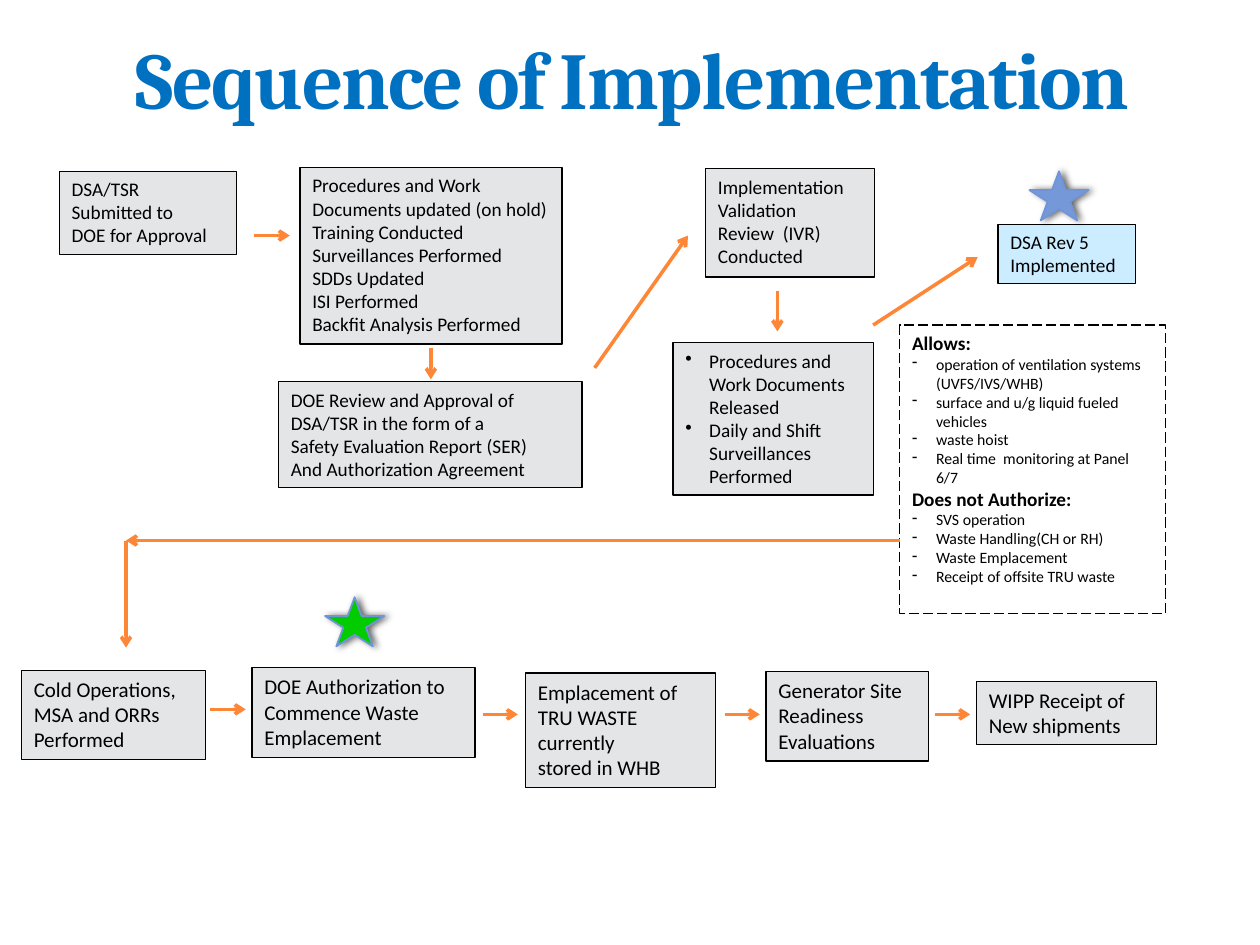
from typing import NamedTuple

from pptx import Presentation
from pptx.dml.color import RGBColor
from pptx.enum.dml import MSO_LINE
from pptx.enum.shapes import MSO_CONNECTOR, MSO_SHAPE
from pptx.enum.text import MSO_ANCHOR, MSO_AUTO_SIZE, PP_ALIGN
from pptx.oxml import parse_xml
from pptx.oxml.ns import nsdecls, qn
from pptx.oxml.xmlchemy import OxmlElement
from pptx.util import Inches, Pt

COLORS = {
    "title": "0070C0", "text": "000000", "border": "000000",
    "step": "E4E5E6", "milestone": "CCECFF", "arrow": "FE8637",
    "blue star": "7598D9", "green star": "00CC00", "star edge": "7094D7",
}


class Item(NamedTuple):
    text: str
    bullet: str = ""
    size: float = 11
    bold: bool = False


class Box(NamedTuple):
    left: float
    top: float
    width: float
    height: float
    items: list[Item]
    fill: str | None = "step"
    wrap: bool = False


class Arrow(NamedTuple):
    x1: float
    y1: float
    x2: float
    y2: float


class Star(NamedTuple):
    left: float
    top: float
    fill: str


def lines(*texts: str, size: float = 11) -> list[Item]:
    return [Item(text, size=size) for text in texts]


def dashes(*texts: str) -> list[Item]:
    return [Item(text, "-", 9) for text in texts]


def heading(text: str) -> list[Item]:
    return [Item(text, bold=True)]


# A vertical tab is a line break inside a paragraph.
BOXES = [
    Box(0.47, 1.36, 1.41, 0.66, lines("DSA/TSR", "Submitted to", "DOE for Approval")),
    Box(2.38, 1.33, 2.08, 1.4, lines(
        "Procedures and Work", "Documents updated (on hold)", "Training Conducted",
        "Surveillances Performed", "SDDs Updated", "ISI Performed",
        "Backfit Analysis Performed")),
    Box(2.21, 3.03, 2.41, 0.84, lines(
        "DOE Review and Approval of", "DSA/TSR in the form of a",
        "Safety Evaluation Report (SER)", "And Authorization Agreement")),
    Box(5.6, 1.34, 1.34, 0.86, lines(
        "Implementation Validation", "Review  (IVR)", "Conducted"), wrap=True),
    Box(5.34, 2.72, 1.59, 1.21, [
        Item("Procedures and\vWork Documents\vReleased", "•"),
        Item("Daily and Shift\vSurveillances\vPerformed", "•")]),
    Box(7.92, 1.78, 1.09, 0.47, lines("DSA Rev 5", "Implemented"), "milestone"),
    Box(7.14, 2.58, 2.11, 2.29,
        heading("Allows:")
        + dashes("operation of ventilation systems\v(UVFS/IVS/WHB)",
                 "surface and u/g liquid fueled\vvehicles", "waste hoist",
                 "Real time  monitoring at Panel\v6/7")
        + heading("Does not Authorize:")
        + dashes("SVS operation", "Waste Handling(CH or RH)",
                 "Waste Emplacement", "Receipt of offsite TRU waste"),
        None, True),
    Box(0.17, 5.32, 1.46, 0.71, lines(
        "Cold Operations,", "MSA and ORRs", "Performed", size=12)),
    Box(2, 5.3, 1.77, 0.71, lines(
        "DOE Authorization to", "Commence Waste", "Emplacement", size=12)),
    Box(4.17, 5.34, 1.51, 0.91, lines(
        "Emplacement of", "TRU WASTE currently", "stored in WHB", size=12), wrap=True),
    Box(6.08, 5.33, 1.29, 0.71, lines(
        "Generator Site", "Readiness", "Evaluations", size=12)),
    Box(7.75, 5.41, 1.43, 0.5, lines("WIPP Receipt of", "New shipments", size=12)),
]

SHORT = 0.28
ARROWS = [
    *(Arrow(x, y, x + SHORT, y) for x, y in (
        (2.02, 1.87), (1.67, 5.63), (3.83, 5.67), (5.75, 5.67), (7.42, 5.67))),
    Arrow(3.42, 2.76, 3.42, 3.01),
    Arrow(4.72, 2.92, 5.46, 1.87),
    Arrow(6.17, 2.31, 6.17, 2.63),
    Arrow(6.93, 2.58, 7.76, 2.04),
    Arrow(7.14, 4.29, 1, 4.29),
    Arrow(1, 4.29, 1, 5.14),
]

STARS = [Star(8.17, 1.36, "blue star"), Star(2.58, 4.74, "green star")]


def color(name: str) -> RGBColor:
    return RGBColor.from_string(COLORS[name])


def set_bullet(paragraph, character: str) -> None:
    properties = paragraph._p.get_or_add_pPr()
    properties.set("marL", str(Inches(0.19)))
    properties.set("indent", str(-Inches(0.19)))
    bullet = OxmlElement("a:buChar")
    bullet.set("char", character)
    properties.append(bullet)


def draw_box(slide, box: Box) -> None:
    shape = slide.shapes.add_shape(
        MSO_SHAPE.RECTANGLE, *map(Inches, (box.left, box.top, box.width, box.height)))
    shape.shadow.inherit = False
    shape.line.color.rgb = color("border")
    shape.line.width = Pt(0.75)
    if box.fill:
        shape.fill.solid()
        shape.fill.fore_color.rgb = color(box.fill)
    else:
        shape.fill.background()
        shape.line.dash_style = MSO_LINE.LONG_DASH
    frame = shape.text_frame
    frame.word_wrap = box.wrap
    frame.auto_size = MSO_AUTO_SIZE.SHAPE_TO_FIT_TEXT
    frame.vertical_anchor = MSO_ANCHOR.TOP
    for index, item in enumerate(box.items):
        paragraph = frame.add_paragraph() if index else frame.paragraphs[0]
        paragraph.text = item.text
        paragraph.alignment = PP_ALIGN.LEFT
        if item.bullet:
            set_bullet(paragraph, item.bullet)
        paragraph.font.name = "Calibri"
        paragraph.font.size = Pt(item.size)
        paragraph.font.bold = item.bold
        paragraph.font.color.rgb = color("text")


def draw_arrow(slide, arrow: Arrow) -> None:
    connector = slide.shapes.add_connector(MSO_CONNECTOR.STRAIGHT, *map(Inches, arrow))
    connector.line.color.rgb = color("arrow")
    connector.line.width = Pt(2)
    head = OxmlElement("a:tailEnd")
    head.set("type", "arrow")
    properties = connector._element.spPr
    properties.find(qn("a:ln")).append(head)
    properties.append(OxmlElement("a:effectLst"))


def draw_star(slide, star: Star) -> None:
    shape = slide.shapes.add_shape(
        MSO_SHAPE.STAR_5_POINT, *map(Inches, (star.left, star.top, 0.47, 0.39)))
    shape.fill.solid()
    shape.fill.fore_color.rgb = color(star.fill)
    shape.line.color.rgb = color("star edge")
    shape.line.width = Pt(1)
    shape.shadow.inherit = False
    shape._element.spPr.find(qn("a:effectLst")).append(parse_xml(
        f'<a:outerShdw {nsdecls("a")} blurRad="{Pt(4)}" dist="{Pt(2)}" dir="0">'
        '<a:srgbClr val="000000"><a:alpha val="60000"/></a:srgbClr></a:outerShdw>'))


def set_title(slide, text: str) -> None:
    title = slide.shapes.title
    title.left, title.top, title.width, title.height = map(
        Inches, (0.85, -0.01, 8.33, 1.25))
    frame = title.text_frame
    frame.text = text
    frame.auto_size = MSO_AUTO_SIZE.NONE
    frame.vertical_anchor = MSO_ANCHOR.MIDDLE
    paragraph = frame.paragraphs[0]
    paragraph.alignment = PP_ALIGN.CENTER
    paragraph.font.name = "Cambria"
    paragraph.font.size = Pt(46)
    paragraph.font.bold = True
    paragraph.font.color.rgb = color("title")
    paragraph.runs[0]._r.get_or_add_rPr().set("spc", "-100")


def main() -> None:
    presentation = Presentation()
    presentation.slide_width, presentation.slide_height = Inches(10), Inches(7.5)
    slide = presentation.slides.add_slide(presentation.slide_layouts[5])
    set_title(slide, "Sequence of Implementation")
    for box in BOXES:
        draw_box(slide, box)
    for star in STARS:
        draw_star(slide, star)
    for arrow in ARROWS:
        draw_arrow(slide, arrow)
    presentation.save("out.pptx")


if __name__ == "__main__":
    main()
